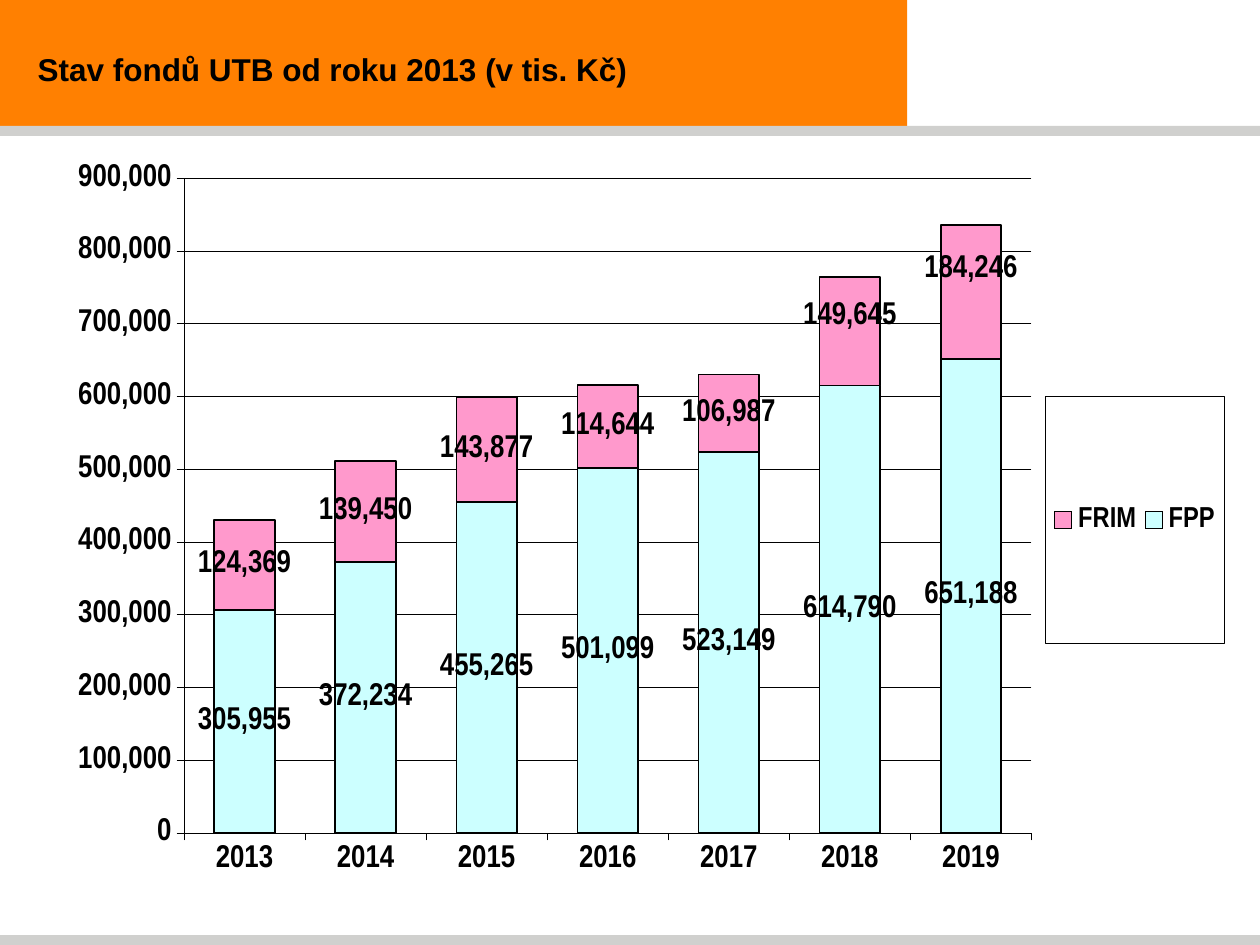
from pptx import Presentation
from pptx import oxml
from pptx import util as u
from pptx.chart import data as chart_data
from pptx.dml.color import RGBColor
from pptx.enum import chart as charts, shapes, text
from pptx.oxml import ns

COLOURS = {"orange": "FF8001", "grey": "D0D0CE", "black": "000000",
           "cyan": "CCFFFF", "pink": "FF99CC"}
WIDTH, HEIGHT = u.Cm(25.4), u.Cm(19.05)
BAND_WIDTH, BAND_HEIGHT, RULE_HEIGHT = u.Cm(18.29), u.Cm(2.54), u.Cm(0.2)
YEARS = [str(year) for year in range(2013, 2020)]
FUNDS = {
    "FPP": ("cyan", [305955, 372234, 455265, 501099, 523149, 614790, 651188]),
    "FRIM": ("pink", [124369, 139450, 143877, 114644, 106987, 149645, 184246]),
}
LABEL_SHIFTS = {5: {"x": 0, "y": -0.02}, 6: {"x": 0, "y": -0.03}}


def colour(name):
    """Return a named colour."""
    return RGBColor.from_string(COLOURS[name])


def style_font(font, size, name="Arial Narrow"):
    """Make a font bold and black."""
    font.name, font.size, font.bold = name, u.Pt(size), True
    font.color.rgb = colour("black")


def style_line(line, width):
    """Make a line black with the given width."""
    line.color.rgb = colour("black")
    line.width = u.Pt(width)


def add_bar(page, left, top, width, height, fill):
    """Add a plain filled rectangle."""
    bar = page.shapes.add_shape(shapes.MSO_SHAPE.RECTANGLE, left, top, width, height)
    bar.shadow.inherit = False
    bar.fill.solid()
    bar.fill.fore_color.rgb = colour(fill)
    bar.line.fill.background()


def set_layout(parent, index, **places):
    """Give a chart part a manual layout as fractions of the chart."""
    for old in parent.findall(ns.qn("c:layout")):
        parent.remove(old)
    parts = "".join(f'<c:{key} val="{value}"/>' for key, value in places.items())
    parent.insert(index, oxml.parse_xml(
        f'<c:layout {ns.nsdecls("c")}><c:manualLayout>{parts}</c:manualLayout></c:layout>'))


def add_header(page, left, top, width, height):
    """Add the orange band with the title."""
    add_bar(page, left, top, width, height, "orange")
    inset = u.Cm(0.23)
    box = page.shapes.add_textbox(left, top + inset, width, height - inset)
    frame = box.text_frame
    frame.word_wrap = True
    frame.vertical_anchor = text.MSO_ANCHOR.MIDDLE
    frame.margin_left = u.Cm(0.76)
    frame.text = "Stav fondů UTB od roku 2013 (v tis. Kč)"
    style_font(frame.paragraphs[0].runs[0].font, 18, "Arial")


def style_axes(chart):
    """Format both axes and the gridlines."""
    for axis in (chart.category_axis, chart.value_axis):
        axis.major_tick_mark = charts.XL_TICK_MARK.OUTSIDE
        axis.minor_tick_mark = charts.XL_TICK_MARK.NONE
        style_font(axis.tick_labels.font, 18)
        style_line(axis.format.line, 0.25)
    chart.category_axis.tick_label_position = charts.XL_TICK_LABEL_POSITION.LOW
    values = chart.value_axis
    values.minimum_scale, values.maximum_scale, values.major_unit = 0, 900000, 100000
    values.tick_labels.number_format = "#,##0"
    values.tick_labels.number_format_is_linked = False
    values.has_major_gridlines = True
    style_line(values.major_gridlines.format.line, 0.25)


def style_series(series):
    """Format the columns and value labels of one fund."""
    series.format.fill.solid()
    series.format.fill.fore_color.rgb = colour(FUNDS[series.name][0])
    style_line(series.format.line, 1)
    labels = series.data_labels
    labels.show_value = True
    labels.number_format, labels.number_format_is_linked = "#,##0", False
    labels.position = charts.XL_LABEL_POSITION.CENTER
    style_font(labels.font, 18)


def style_legend(chart):
    """Add the framed legend on the right."""
    chart.has_legend = True
    legend = chart.legend
    legend.position = charts.XL_LEGEND_POSITION.RIGHT
    legend.include_in_layout = False
    style_font(legend.font, 16.5)
    element = legend._element
    set_layout(element, 1, xMode="edge", yMode="edge", x=0.83, y=0.31, w=0.15, h=0.33)
    element.find(ns.qn("c:txPr")).addprevious(oxml.parse_xml(
        f'<c:spPr {ns.nsdecls("c", "a")}><a:ln w="{u.Pt(0.25)}"><a:solidFill>'
        f'<a:srgbClr val="{COLOURS["black"]}"/></a:solidFill></a:ln></c:spPr>'))


def add_funds_chart(page, left, top, width, height):
    """Add the stacked column chart of the funds."""
    data = chart_data.CategoryChartData(number_format="#,##0")
    data.categories = YEARS
    for name, (_, values) in FUNDS.items():
        data.add_series(name, values)
    chart = page.shapes.add_chart(charts.XL_CHART_TYPE.COLUMN_STACKED,
                                  left, top, width, height, data).chart
    chart.has_title = False
    style_font(chart.font, 18)
    plot = chart.plots[0]
    plot.gap_width, plot.overlap, plot.vary_by_categories = 100, 100, False
    style_axes(chart)
    for series in plot.series:
        style_series(series)
    for index, shift in LABEL_SHIFTS.items():
        label = plot.series[1].points[index].data_label
        label.position = charts.XL_LABEL_POSITION.CENTER
        style_font(label.font, 18)
    for element, shift in zip(plot.series[1]._element.xpath(".//c:dLbl"),
                              LABEL_SHIFTS.values()):
        set_layout(element, 1, **shift)
    style_legend(chart)
    area = chart._chartSpace.find(".//" + ns.qn("c:plotArea"))
    set_layout(area, 0, layoutTarget="inner", xMode="edge", yMode="edge",
               x=0.104, y=0.019, w=0.714, h=0.874)


def main():
    """Build and save the slide."""
    deck = Presentation()
    deck.slide_width, deck.slide_height = WIDTH, HEIGHT
    page = deck.slides.add_slide(deck.slide_layouts[6])
    add_header(page, 0, 0, BAND_WIDTH, BAND_HEIGHT)
    for top in (BAND_HEIGHT, HEIGHT - RULE_HEIGHT):
        add_bar(page, 0, top, WIDTH, RULE_HEIGHT, "grey")
    add_funds_chart(page, u.Cm(1.22), u.Cm(3.3), u.Cm(23.93), u.Cm(15.11))
    deck.save("out.pptx")


if __name__ == "__main__":
    main()
